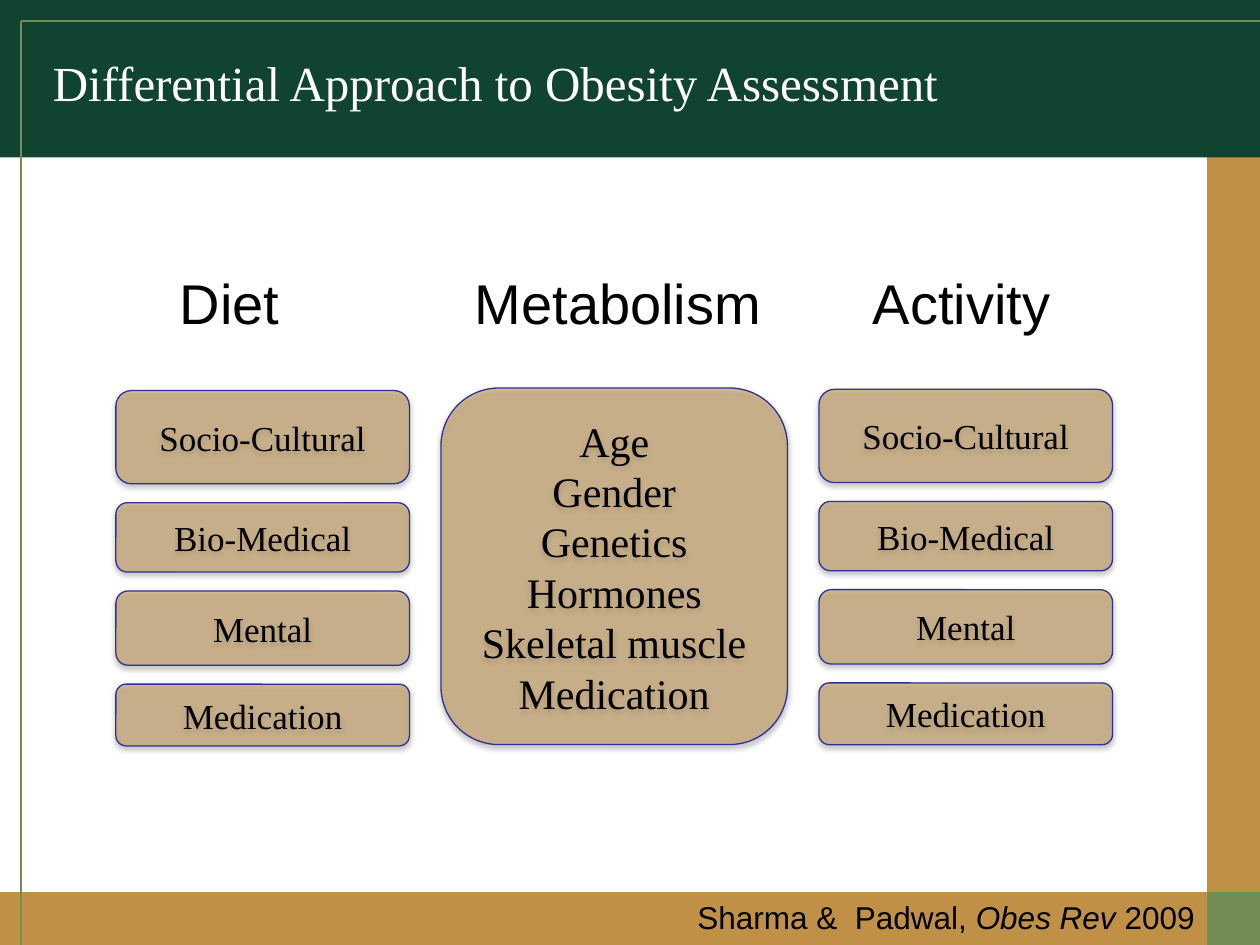
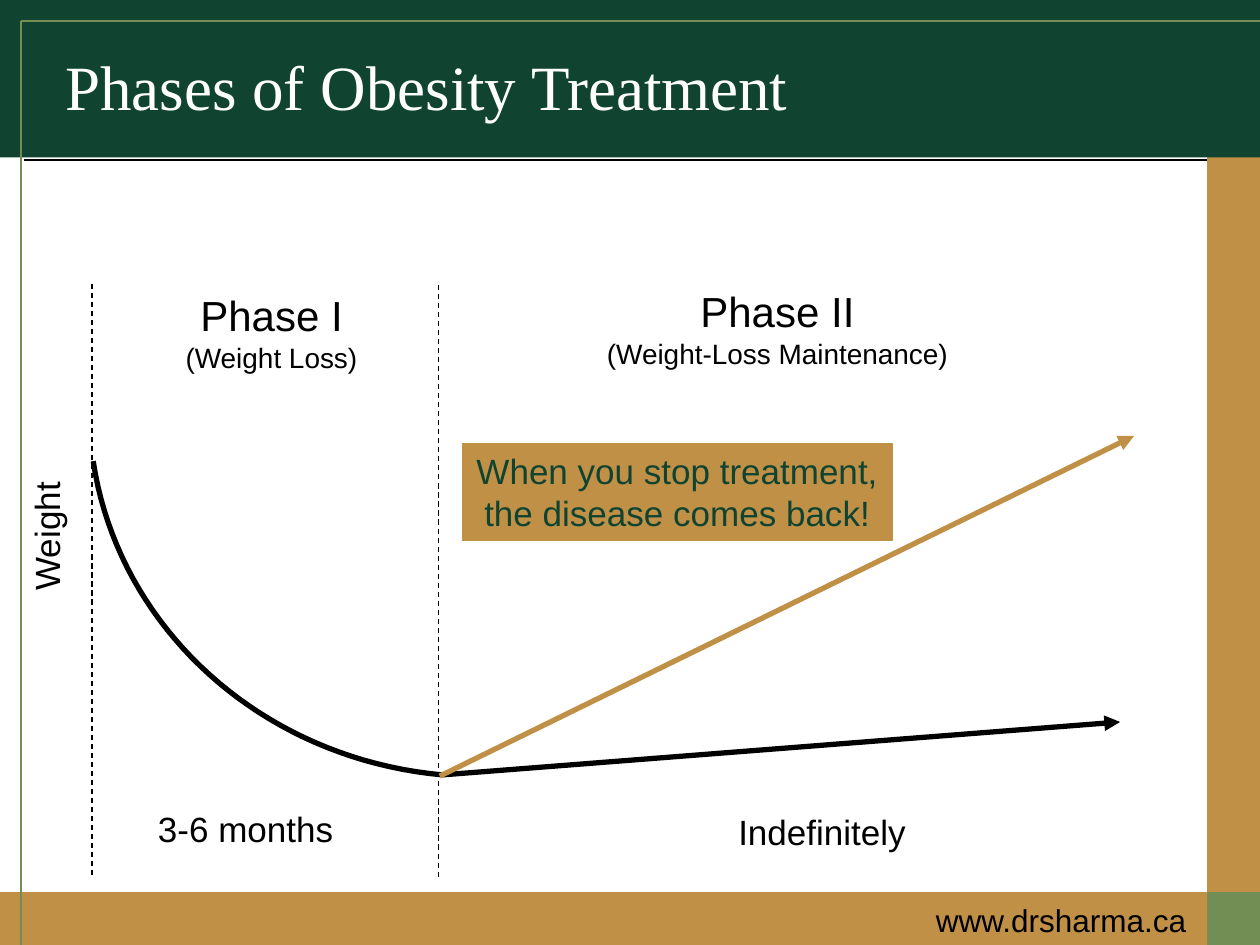
from lxml import etree
from pptx import Presentation
from pptx.dml.color import RGBColor
from pptx.enum import dml, shapes, text
from pptx.oxml import ns
from pptx.util import Inches, Pt

GREEN, GOLD, SAGE = "104431", "C09047", "738E54"
BLACK, WHITE, NAVY = "000000", "FFFFFF", "2F2F98"
SERIF, SANS = "Times New Roman", "Arial"
LEFT, CENTER, RIGHT = text.PP_ALIGN.LEFT, text.PP_ALIGN.CENTER, text.PP_ALIGN.RIGHT
CAUSES = [("Socio-Cultural", 0.74), ("Bio-Medical", 0.55),
          ("Mental", 0.59), ("Medication", 0.49)]
CAUSE_WIDTH, CAUSE_GAP = 2.33, 0.15


def color(value):
    """Turn a hex string into a colour."""
    return RGBColor.from_string(value)


def add_xml(parent, tag, **attributes):
    """Append a drawing element with the given attributes."""
    return etree.SubElement(parent, ns.qn(tag), attributes)


def write(frame, paragraphs, size=20, font=SANS, fill=BLACK, align=CENTER,
          anchor=text.MSO_ANCHOR.TOP, wrap=False, inset=None):
    """Fill a frame with paragraphs, each a string or a list of (text, font options)."""
    frame.word_wrap = wrap
    frame.vertical_anchor = anchor
    if inset is not None:
        frame.margin_left = frame.margin_right = Inches(inset)
        frame.margin_top = frame.margin_bottom = Inches(inset)
    for index, content in enumerate(paragraphs):
        paragraph = frame.paragraphs[0] if index == 0 else frame.add_paragraph()
        paragraph.alignment = align
        runs = [(content, {})] if isinstance(content, str) else content
        for words, options in runs:
            run = paragraph.add_run()
            run.text = words
            run.font.name = font
            run.font.size = Pt(options.get("size", size))
            run.font.italic = options.get("italic", False)
            run.font.color.rgb = color(fill)


def add_text(slide, box, *paragraphs, rotation=0, **style):
    """Add a text box that fits its text."""
    shape = slide.shapes.add_textbox(*map(Inches, box))
    shape.rotation = rotation
    write(shape.text_frame, paragraphs, **style)
    shape.text_frame.auto_size = text.MSO_AUTO_SIZE.SHAPE_TO_FIT_TEXT
    return shape


def add_block(slide, box, fill, line=None, kind=shapes.MSO_SHAPE.RECTANGLE):
    """Add a flat filled shape with an optional thin outline."""
    shape = slide.shapes.add_shape(kind, *map(Inches, box))
    shape.shadow.inherit = False
    shape.fill.solid()
    shape.fill.fore_color.rgb = color(fill)
    if line:
        shape.line.color.rgb = color(line)
        shape.line.width = Pt(0.75)
    else:
        shape.line.fill.background()
    return shape


def add_line(slide, start, end, stroke=BLACK, width=0.75, dashed=False, arrow=False):
    """Add a straight line, dashed or with an arrowhead if asked."""
    line = slide.shapes.add_connector(shapes.MSO_CONNECTOR.STRAIGHT,
                                      *map(Inches, start + end))
    line.line.color.rgb = color(stroke)
    line.line.width = Pt(width)
    if dashed:
        line.line.dash_style = dml.MSO_LINE.DASH
    if arrow:
        add_xml(line._element.spPr.get_or_add_ln(), "a:tailEnd", type="triangle")
    add_xml(line._element.spPr, "a:effectLst")
    return line


def add_card(slide, box, *paragraphs, size=20):
    """Add a translucent rounded card with a soft shadow."""
    card = add_block(slide, box, GOLD, NAVY, shapes.MSO_SHAPE.ROUNDED_RECTANGLE)
    properties = card._element.spPr
    add_xml(properties.find(ns.qn("a:solidFill"))[0], "a:alpha", val="50000")
    shadow = add_xml(properties.find(ns.qn("a:effectLst")), "a:outerShdw", blurRad="40000",
                     dist="20000", dir="5400000", rotWithShape="0")
    add_xml(add_xml(shadow, "a:srgbClr", val=BLACK), "a:alpha", val="38000")
    write(card.text_frame, paragraphs, size=size, font=SERIF, wrap=True,
          anchor=text.MSO_ANCHOR.MIDDLE)


def add_base_slide(presentation, title, title_box, **style):
    """Add a slide with the shared bands, frame lines and title."""
    slide = presentation.slides.add_slide(presentation.slide_layouts[6])
    add_block(slide, (9.58, 0, 0.42, 7.08), GOLD)
    add_block(slide, (9.58, 7.08, 0.42, 0.42), SAGE)
    add_block(slide, (0, 7.08, 9.58, 0.42), GOLD)
    add_block(slide, (0, 0, 10, 1.25), GREEN)
    add_line(slide, (0.17, 7.5), (0.17, 0.17), SAGE, 1.1)
    add_line(slide, (0.17, 0.17), (10, 0.17), SAGE, 1.1)
    add_text(slide, title_box, title, font=SERIF, fill=WHITE, align=LEFT, **style)
    return slide


def add_causes(slide, left, top):
    """Stack the cause cards downwards from a corner."""
    for cause, height in CAUSES:
        add_card(slide, (left, top, CAUSE_WIDTH, height), cause)
        top += height + CAUSE_GAP


def add_assessment_slide(presentation):
    """Build the slide with the three columns of the assessment."""
    slide = add_base_slide(presentation, "Differential Approach to Obesity Assessment",
                           (0.42, 0.42, 8.17, 0.75), size=28, inset=0, wrap=True)
    for heading, left, width in [("Diet", 1.33, 1), ("Metabolism", 3.67, 2.5),
                                 ("Activity", 6.83, 1.62)]:
        add_text(slide, (left, 2.08, width, 0.64), heading, size=32, align=LEFT)
    add_causes(slide, 0.92, 3.1)
    add_card(slide, (3.5, 3.08, 2.75, 2.83), "Age", "Gender", "Genetics", "Hormones",
             "Skeletal muscle", "Medication", size=24)
    add_causes(slide, 6.5, 3.09)
    add_text(slide, (3.08, 7.08, 6.5, 0.4),
             [("Sharma &  Padwal,", {}), (" Obes Rev", {"italic": True}), (" 2009", {})],
             size=18, align=RIGHT, wrap=True)


def add_curve(slide, controls, steps=40):
    """Draw a cubic curve through its four control points."""
    weights = (1, 3, 3, 1)
    points = [tuple(Inches(sum(weight * (1 - t) ** (3 - k) * t ** k * control[axis]
                               for k, (weight, control) in enumerate(zip(weights, controls))))
                    for axis in (0, 1))
              for t in (step / steps for step in range(steps + 1))]
    builder = slide.shapes.build_freeform(*points[0])
    builder.add_line_segments(points[1:], close=False)
    curve = builder.convert_to_shape()
    curve.shadow.inherit = False
    curve.fill.background()
    curve.line.color.rgb = color(BLACK)
    curve.line.width = Pt(3)


def add_phase(slide, left, top, heading_box, heading, note, duration_box, duration):
    """Add a phase: its dashed start line, and labels offset from that line's top."""
    add_line(slide, (left, top), (left, top + 4.72), dashed=True)
    for (x, y, width, height), lines in [
            (heading_box, [[(heading, {"size": 24})], [(note, {"size": 16})]]),
            (duration_box, [duration])]:
        add_text(slide, (left + x, top + y, width, height), *lines)


def add_phases_slide(presentation):
    """Build the slide with weight over the two treatment phases."""
    slide = add_base_slide(presentation, "Phases of Obesity Treatment",
                           (0.42, 0.33, 8.17, 1.08), size=36)
    add_line(slide, (0.19, 1.27), (9.58, 1.27))
    add_curve(slide, [(3.51, 6.15), (2.08, 6.02), (0.94, 4.99), (0.74, 3.66)])
    add_phase(slide, 0.73, 2.25, (0.64, 0, 1.57, 0.77), "Phase I", "(Weight Loss)",
              (0.38, 4.11, 1.68, 0.43), "3-6 months")
    add_phase(slide, 3.48, 2.26, (1.23, -0.04, 2.92, 0.77), "Phase II",
              "(Weight-Loss Maintenance)", (2.21, 4.12, 1.67, 0.43), "Indefinitely")
    add_line(slide, (3.51, 6.15), (8.89, 5.73), width=3, arrow=True)
    add_line(slide, (3.49, 6.16), (9, 3.46), GOLD, 3, arrow=True)
    callout = add_block(slide, (3.67, 3.52, 3.41, 0.77), GOLD, GOLD)
    write(callout.text_frame, ["When you stop treatment,", "the disease comes back!"],
          fill=GREEN)
    add_text(slide, (-0.2, 4.04, 1.13, 0.43), "Weight", rotation=270)
    add_text(slide, (7.33, 7.1, 2.22, 0.4), "www.drsharma.ca", size=18, align=LEFT)


def main():
    """Build and save the presentation."""
    presentation = Presentation()
    presentation.slide_width, presentation.slide_height = Inches(10), Inches(7.5)
    add_assessment_slide(presentation)
    add_phases_slide(presentation)
    presentation.save("out.pptx")


if __name__ == "__main__":
    main()
